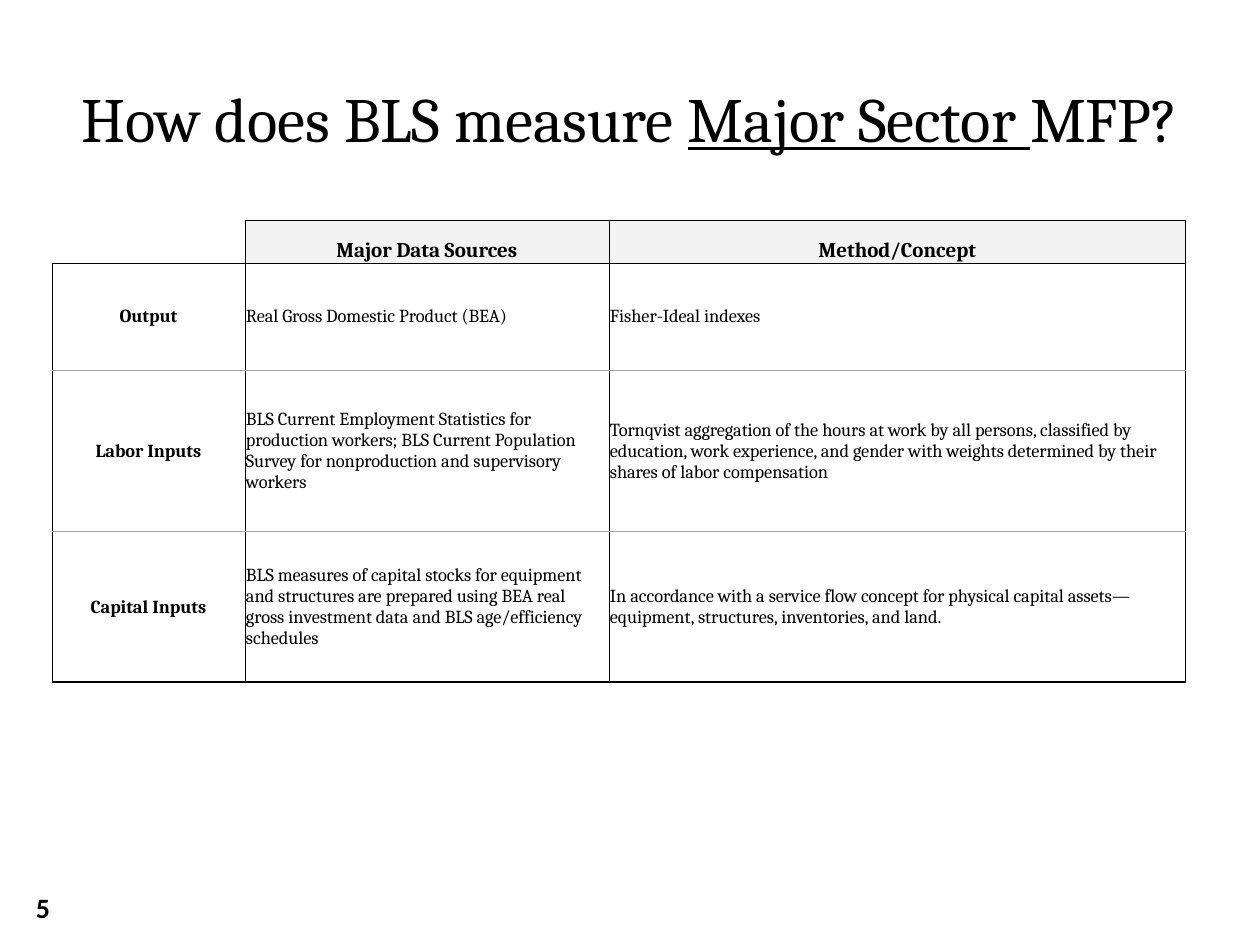
import dataclasses

import lxml.etree
import pptx
import pptx.dml.color
import pptx.enum.text
import pptx.oxml.ns
import pptx.util

ALIGN = pptx.enum.text.PP_ALIGN
ANCHOR = pptx.enum.text.MSO_ANCHOR


@dataclasses.dataclass(frozen=True)
class Theme:
    serif: str = "Cambria"
    sans: str = "Calibri"
    ink: str = "000000"
    rule: str = "A6A6A6"
    header_fill: str = "F2F2F2"
    title_size: float = 36
    number_size: float = 16
    header_size: float = 12
    body_size: float = 10.5
    thin: float = 0.5
    thick: float = 1


def px(n):
    return pptx.util.Emu(round(n * 914400 / 126))


class Deck:
    def __init__(self, theme, width, height):
        self.theme = theme
        self.prs = pptx.Presentation()
        self.prs.slide_width, self.prs.slide_height = px(width), px(height)
        self.s = self.prs.slides.add_slide(self.prs.slide_layouts[6])

    def style(self, p, size, name, bold=False, align=ALIGN.CENTER):
        p.alignment = align
        p.font.size = pptx.util.Pt(size)
        p.font.name = name
        p.font.bold = bold
        p.font.color.rgb = pptx.dml.color.RGBColor.from_string(self.theme.ink)

    def text(self, box, runs, size, name, bold=False):
        tf = self.s.shapes.add_textbox(*map(px, box)).text_frame
        tf.word_wrap = True
        tf.vertical_anchor = ANCHOR.MIDDLE
        p = tf.paragraphs[0]
        for words, underline in runs:
            r = p.add_run()
            r.text = words
            if underline:
                r.font.underline = True
        self.style(p, size, name, bold)

    def border(self, cell, edges):
        tc_pr = cell._tc.get_or_add_tcPr()
        qn = pptx.oxml.ns.qn
        for i, side in enumerate("LRTB"):
            ln = lxml.etree.Element(qn(f"a:ln{side}"))
            if edges[side]:
                color, width = edges[side]
                ln.set("w", str(pptx.util.Pt(width)))
                fill = lxml.etree.SubElement(ln, qn("a:solidFill"))
                lxml.etree.SubElement(fill, qn("a:srgbClr"), val=color)
            else:
                lxml.etree.SubElement(ln, qn("a:noFill"))
            tc_pr.insert(i, ln)

    def cell(self, cell, words, header, label):
        t = self.theme
        cell.margin_left = cell.margin_right = cell.margin_top = px(1)
        cell.margin_bottom = 0
        cell.vertical_anchor = ANCHOR.BOTTOM if header else ANCHOR.MIDDLE
        if header and words:
            cell.fill.solid()
            cell.fill.fore_color.rgb = pptx.dml.color.RGBColor.from_string(t.header_fill)
        else:
            cell.fill.background()
        cell.text = words
        strong = header or label
        self.style(cell.text_frame.paragraphs[0],
                   t.header_size if header else t.body_size, t.serif, strong,
                   ALIGN.CENTER if strong else ALIGN.LEFT)

    def table(self, left, top, widths, heights, rows):
        t = self.theme
        black, grey = (t.ink, t.thin), (t.rule, t.thin)
        levels = [black, black] + [grey] * (len(rows) - 2) + [(t.ink, t.thick)]
        tbl = self.s.shapes.add_table(
            len(rows), len(widths), px(left), px(top),
            px(sum(widths)), px(sum(heights))).table
        tbl.first_row = tbl.horz_banding = False
        for column, width in zip(tbl.columns, widths):
            column.width = px(width)
        for i, (height, row) in enumerate(zip(heights, rows)):
            tbl.rows[i].height = px(height)
            for j, words in enumerate(row):
                cell = tbl.cell(i, j)
                self.cell(cell, words, header=i == 0, label=j == 0)
                edges = {"L": black, "R": black, "T": levels[i], "B": levels[i + 1]}
                if not words:
                    edges.update(L=None, T=None)
                self.border(cell, edges)


ROWS = [
    ("", "Major Data Sources", "Method/Concept"),
    ("Output", "Real Gross Domestic Product (BEA)", "Fisher-Ideal indexes"),
    ("Labor Inputs",
     "BLS Current Employment Statistics for production workers; BLS Current "
     "Population Survey for nonproduction and supervisory workers",
     "Tornqvist aggregation of the hours at work by all persons, classified by "
     "education, work experience, and gender with weights determined by their "
     "shares of labor compensation"),
    ("Capital Inputs",
     "BLS measures of capital stocks for equipment and structures are prepared "
     "using BEA real gross investment data and BLS age/efficiency schedules",
     "In accordance with a service flow concept for physical capital "
     "assets—equipment, structures, inventories, and land."),
]


def main():
    theme = Theme()
    deck = Deck(theme, 1260, 945)
    deck.text((42, 38, 1176, 158),
              [("How does BLS measure ", False), ("Major Sector ", True), ("MFP?", False)],
              theme.title_size, theme.serif)
    deck.text((1, 882, 84, 50), [("5", False)], theme.number_size, theme.sans, bold=True)
    deck.table(52, 220, (193, 364, 577), (43, 107, 162, 150), ROWS)
    deck.prs.save("out.pptx")


if __name__ == "__main__":
    main()
